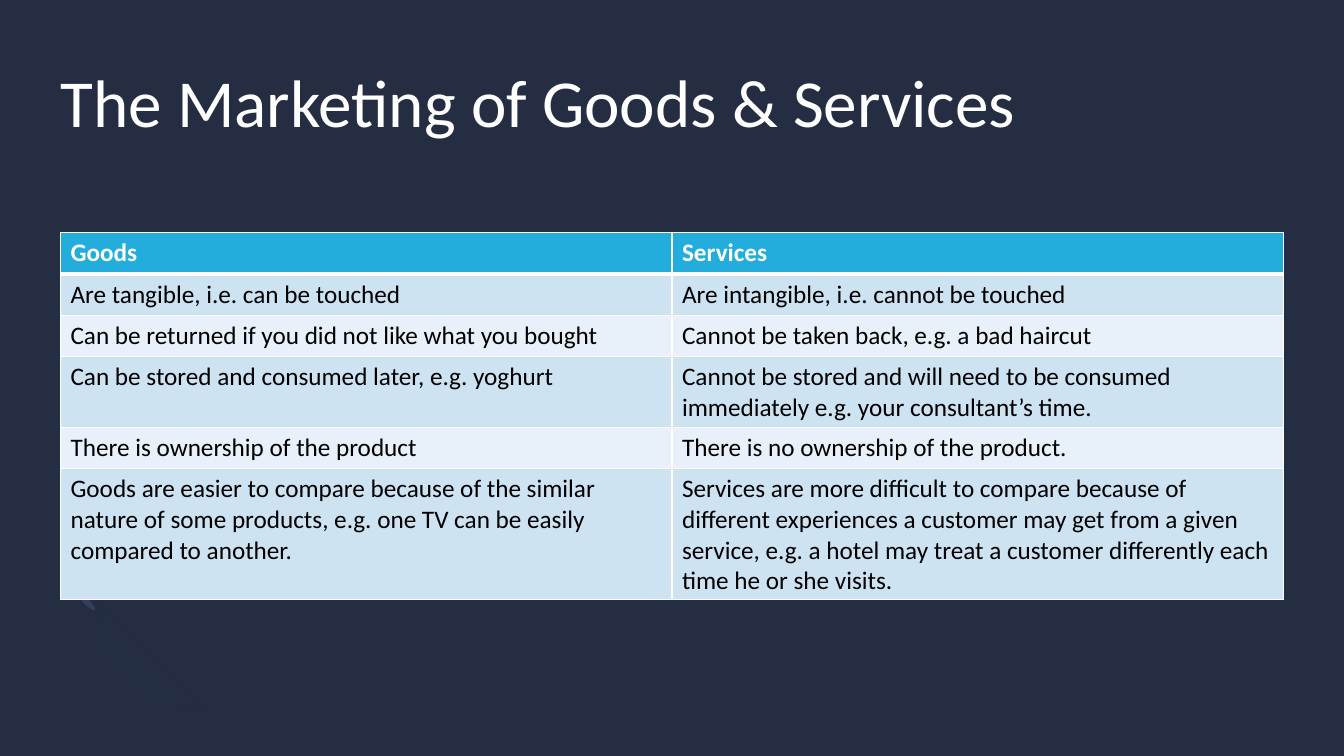
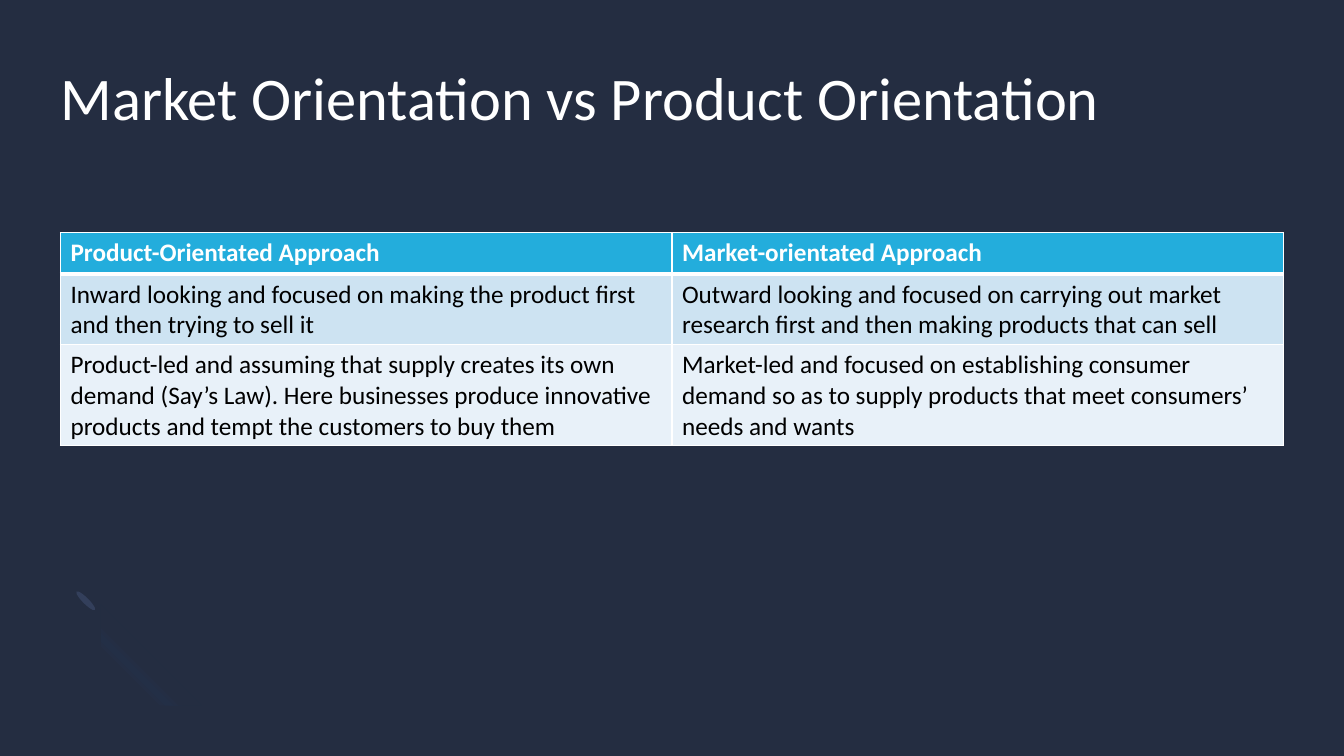
from copy import deepcopy

from lxml.etree import SubElement
from pptx import Presentation
from pptx.dml.color import RGBColor
from pptx.enum.shapes import MSO_SHAPE
from pptx.enum.text import MSO_ANCHOR
from pptx.oxml.ns import qn
from pptx.util import Inches, Pt

NAVY = RGBColor(0x24, 0x2D, 0x41)
SLATE = RGBColor(0x33, 0x3F, 0x5B)
TEAL_TINT = RGBColor(0x23, 0x2F, 0x46)
WHITE = RGBColor(0xFF, 0xFF, 0xFF)
BLACK = RGBColor(0x00, 0x00, 0x00)
HEADER_BLUE = RGBColor(0x23, 0xAD, 0xDC)
BANDS = (RGBColor(0xE8, 0xF1, 0xF9), RGBColor(0xCD, 0xE3, 0xF2))

FONT = "Calibri"
MARGIN = 0.6
CONTENT_WIDTH = 12.13
ROW_HEIGHT = 0.41

RING_START = (0.76, 6.59)
RING_SEGMENTS = (
    ((0.56, 6.39), (0.58, 6.05), (0.81, 5.82)),
    ((0.99, 6.0),),
    ((0.87, 6.11), (0.86, 6.29), (0.96, 6.38)),
    ((1.06, 6.48), (1.23, 6.47), (1.35, 6.36)),
    ((1.52, 6.54),),
    ((1.3, 6.76), (0.95, 6.79), (0.76, 6.59)),
)
RING_STOPS = ((0, NAVY), (0.27, NAVY), (0.34, TEAL_TINT), (0.41, NAVY), (1, NAVY))

GOODS_AND_SERVICES = (
    ("Goods", "Services"),
    ("Are tangible, i.e. can be touched", "Are intangible, i.e. cannot be touched"),
    ("Can be returned if you did not like what you bought",
     "Cannot be taken back, e.g. a bad haircut"),
    ("Can be stored and consumed later, e.g. yoghurt",
     "Cannot be stored and will need to be consumed immediately e.g. your consultant’s time."),
    ("There is ownership of the product", "There is no ownership of the product."),
    ("Goods are easier to compare because of the similar nature of some products, "
     "e.g. one TV can be easily compared to another.",
     "Services are more difficult to compare because of different experiences a customer "
     "may get from a given service, e.g. a hotel may treat a customer differently each "
     "time he or she visits."),
)
ORIENTATIONS = (
    ("Product-Orientated Approach", "Market-orientated Approach"),
    ("Inward looking and focused on making the product first and then trying to sell it",
     "Outward looking and focused on carrying out market research first and then making "
     "products that can sell"),
    ("Product-led and assuming that supply creates its own demand (Say’s Law). Here "
     "businesses produce innovative products and tempt the customers to buy them",
     "Market-led and focused on establishing consumer demand so as to supply products "
     "that meet consumers’ needs and wants"),
)


def curve_points(start, controls, steps=16):
    first, second, end = controls
    for step in range(1, steps + 1):
        t = step / steps
        u = 1 - t
        yield tuple(
            u ** 3 * a + 3 * u * u * t * b + 3 * u * t * t * c + t ** 3 * d
            for a, b, c, d in zip(start, first, second, end)
        )


class ComparisonDeck:
    def __init__(self):
        self.deck = Presentation()
        self.deck.slide_width = Inches(13.33)
        self.deck.slide_height = Inches(7.5)
        self.page = None

    def add_page(self):
        self.page = self.deck.slides.add_slide(self.deck.slide_layouts[6])
        self.page.background.fill.solid()
        self.page.background.fill.fore_color.rgb = NAVY
        for left, top in ((1.35, 6.37), (0.82, 5.83)):
            self.add_petal(left, top)
        self.add_ring()

    def add_petal(self, left, top):
        petal = self.page.shapes.add_shape(
            MSO_SHAPE.OVAL, Inches(left), Inches(top), Inches(0.06), Inches(0.26))
        petal.rotation = 135
        petal.shadow.inherit = False
        petal.fill.solid()
        petal.fill.fore_color.rgb = SLATE
        petal.line.fill.background()

    def add_ring(self):
        points = [RING_START]
        for segment in RING_SEGMENTS:
            points.extend(segment if len(segment) == 1 else curve_points(points[-1], segment))
        builder = self.page.shapes.build_freeform(*RING_START, scale=Inches(1))
        builder.add_line_segments(points[1:], close=True)
        ring = builder.convert_to_shape()
        ring.shadow.inherit = False
        ring.line.fill.background()
        ring.fill.gradient()
        ring.fill.gradient_angle = 45
        stop_list = ring._element.spPr.find(qn("a:gradFill")).find(qn("a:gsLst"))
        for _ in range(len(RING_STOPS) - len(stop_list)):
            stop_list.append(deepcopy(stop_list[0]))
        for stop, (position, color) in zip(ring.fill.gradient_stops, RING_STOPS):
            stop.position = position
            stop.color.rgb = color

    def add_span(self, frame, text, size, color, bold=False):
        span = frame.paragraphs[0].add_run()
        span.text = text
        span.font.name = FONT
        span.font.size = Pt(size)
        span.font.bold = bold
        span.font.color.rgb = color

    def add_title(self, text, size):
        box = self.page.shapes.add_textbox(
            Inches(MARGIN), Inches(0.6), Inches(CONTENT_WIDTH), Inches(1.46))
        frame = box.text_frame
        frame.word_wrap = True
        frame.vertical_anchor = MSO_ANCHOR.TOP
        frame.margin_left = frame.margin_right = frame.margin_top = frame.margin_bottom = 0
        self.add_span(frame, text, size, WHITE)

    def add_borders(self, cell, top, bottom):
        properties = cell._tc.get_or_add_tcPr()
        for side, width in (("lnL", 1), ("lnR", 1), ("lnT", top), ("lnB", bottom)):
            line = SubElement(properties, qn(f"a:{side}"), w=str(Pt(width)))
            fill = SubElement(line, qn("a:solidFill"))
            SubElement(fill, qn("a:srgbClr"), val=str(WHITE))

    def add_comparison(self, rows):
        table = self.page.shapes.add_table(
            len(rows), len(rows[0]), Inches(MARGIN), Inches(2.31),
            Inches(CONTENT_WIDTH), Inches(ROW_HEIGHT * len(rows))).table
        table.horz_banding = False
        for row_index, texts in enumerate(rows):
            header = row_index == 0
            table.rows[row_index].height = Inches(ROW_HEIGHT)
            for column_index, text in enumerate(texts):
                cell = table.cell(row_index, column_index)
                self.add_borders(cell, 3 if row_index == 1 else 1, 3 if header else 1)
                cell.fill.solid()
                cell.fill.fore_color.rgb = HEADER_BLUE if header else BANDS[row_index % 2]
                self.add_span(cell.text_frame, text, 18, WHITE if header else BLACK, header)

    def save(self):
        self.deck.save("out.pptx")


def main():
    deck = ComparisonDeck()
    for title, size, rows in (
        ("The Marketing of Goods & Services", 48, GOODS_AND_SERVICES),
        ("Market Orientation vs Product Orientation", 43.2, ORIENTATIONS),
    ):
        deck.add_page()
        deck.add_title(title, size)
        deck.add_comparison(rows)
    deck.save()


if __name__ == "__main__":
    main()
